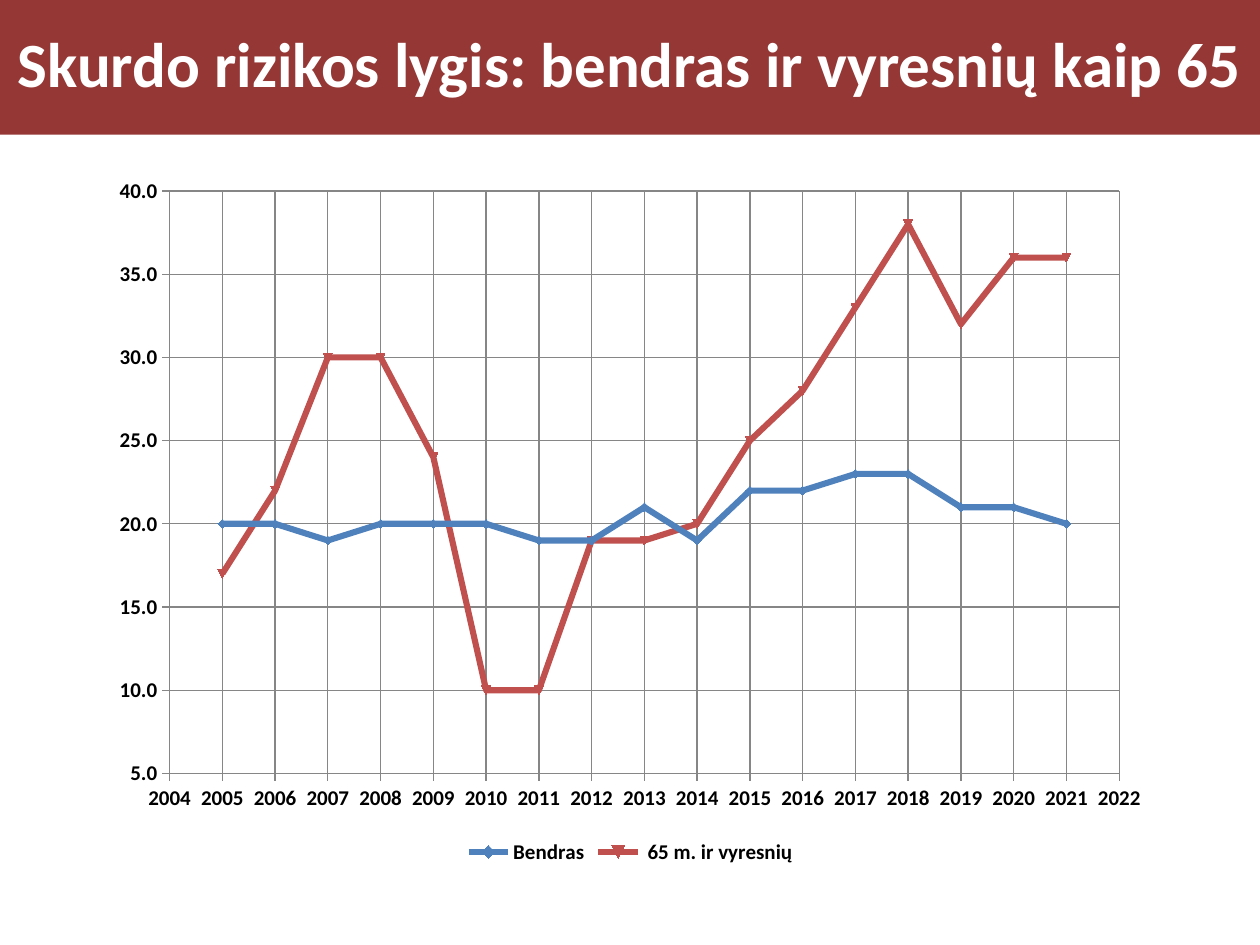
from dataclasses import dataclass

from lxml.etree import SubElement
from pptx import Presentation
from pptx.chart.data import XyChartData
from pptx.dml.color import RGBColor
from pptx.enum.chart import XL_CHART_TYPE, XL_LEGEND_POSITION, XL_MARKER_STYLE, XL_TICK_MARK
from pptx.enum.shapes import MSO_SHAPE
from pptx.enum.text import MSO_ANCHOR, PP_ALIGN
from pptx.oxml.ns import qn
from pptx.util import Inches, Pt


@dataclass(frozen=True)
class Theme:
    font: str = "Calibri"
    title_size: Pt = Pt(36)
    label_size: Pt = Pt(12)
    banner: RGBColor = RGBColor(0x95, 0x37, 0x35)
    white: RGBColor = RGBColor(0xFF, 0xFF, 0xFF)
    black: RGBColor = RGBColor(0, 0, 0)
    grid: RGBColor = RGBColor(0x86, 0x86, 0x86)
    total: RGBColor = RGBColor(0x4F, 0x81, 0xBD)
    seniors: RGBColor = RGBColor(0xC0, 0x50, 0x4D)


theme = Theme()


def style_font(font, size, color):
    font.name = theme.font
    font.size = size
    font.bold = True
    font.color.rgb = color


prs = Presentation()
prs.slide_width, prs.slide_height = Inches(10), Inches(7.5)
s = prs.slides.add_slide(prs.slide_layouts[6])

# Title banner
sp = s.shapes.add_shape(MSO_SHAPE.RECTANGLE, 0, 0, Inches(10), Inches(1.07))
sp.shadow.inherit = False
sp.fill.solid()
sp.fill.fore_color.rgb = theme.banner
sp.line.fill.background()
tf = sp.text_frame
tf.word_wrap = True
tf.vertical_anchor = MSO_ANCHOR.MIDDLE
tf.text = "Skurdo rizikos lygis: bendras ir vyresnių kaip 65"
p = tf.paragraphs[0]
p.alignment = PP_ALIGN.CENTER
p.line_spacing = 0.9
style_font(p.runs[0].font, theme.title_size, theme.white)

# Poverty risk by year
first_year = 2005
rates = {
    "Bendras": [20, 20, 19, 20, 20, 20, 19, 19, 21, 19, 22, 22, 23, 23, 21, 21, 20],
    " 65 m. ir vyresnių": [17, 22, 30, 30, 24, 10, 10, 19, 19, 20, 25, 28, 33, 38, 32, 36, 36],
}
data = XyChartData()
for name, values in rates.items():
    series = data.add_series(name)
    for year, value in enumerate(values, first_year):
        series.add_data_point(year, value)

chart = s.shapes.add_chart(XL_CHART_TYPE.XY_SCATTER_LINES, Inches(0.78), Inches(1.31),
                           Inches(8.45), Inches(5.59), data).chart
chart.has_title = False
style_font(chart.font, theme.label_size, theme.black)
chart.has_legend = True
chart.legend.position = XL_LEGEND_POSITION.BOTTOM
chart.legend.include_in_layout = False
style_font(chart.legend.font, theme.label_size, theme.black)

axes = [
    (chart.category_axis, 2004, 2022, 1, "General"),
    (chart.value_axis, 5, 40, 5, "0.0"),
]
for axis, low, high, step, number_format in axes:
    axis.minimum_scale, axis.maximum_scale, axis.major_unit = low, high, step
    axis.major_tick_mark = XL_TICK_MARK.OUTSIDE
    axis.minor_tick_mark = XL_TICK_MARK.NONE
    axis.has_major_gridlines = True
    for line in (axis.format.line, axis.major_gridlines.format.line):
        line.color.rgb = theme.grid
        line.width = Pt(0.75)
    axis.tick_labels.number_format = number_format
    axis.tick_labels.number_format_is_linked = False
    style_font(axis.tick_labels.font, theme.label_size, theme.black)

plot = chart.plots[0]
plot.vary_by_categories = False
looks = [(theme.total, XL_MARKER_STYLE.DIAMOND), (theme.seniors, XL_MARKER_STYLE.AUTOMATIC)]
for series, (color, marker) in zip(plot.series, looks):
    series.smooth = False
    series.format.line.color.rgb = color
    series.format.line.width = Pt(3.5)
    series.marker.style = marker
    series.marker.size = 5
    series.marker.format.fill.solid()
    series.marker.format.fill.fore_color.rgb = color
    series.marker.format.line.color.rgb = color

# Fixed inner plot area, as fractions of the chart
plot_area = chart.element.find(".//" + qn("c:plotArea"))
layout = plot_area.find(qn("c:layout"))
if layout is None:
    layout = SubElement(plot_area, qn("c:layout"))
    plot_area.insert(0, layout)
manual = SubElement(layout, qn("c:manualLayout"))
for tag, value in [("layoutTarget", "inner"), ("xMode", "edge"), ("yMode", "edge"),
                   ("x", "0.067"), ("y", "0.037"), ("w", "0.892"), ("h", "0.827")]:
    SubElement(manual, qn("c:" + tag)).set("val", value)

prs.save("out.pptx")
